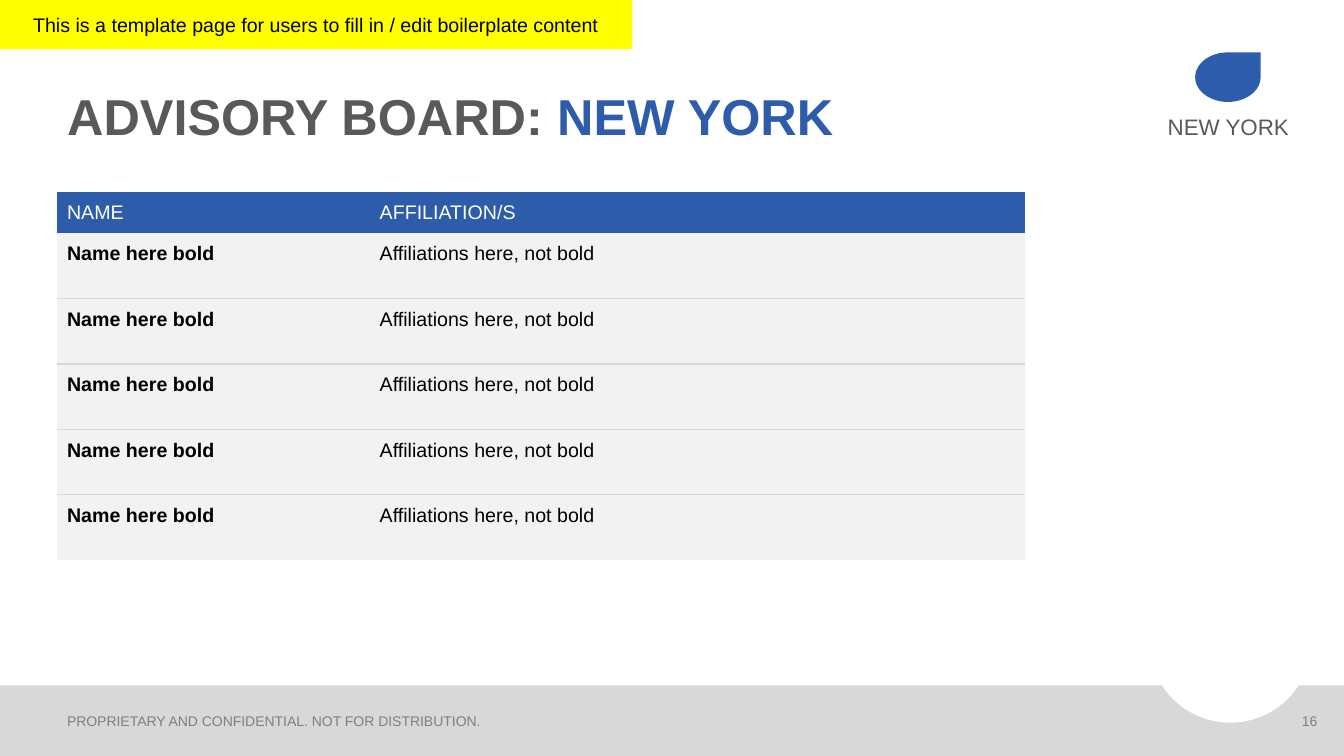
import pptx
import pptx.dml.color
import pptx.enum.shapes
import pptx.enum.text
import pptx.oxml
import pptx.oxml.ns
import pptx.util
from pptx.util import Cm

TITLE = [("ADVISORY BOARD: ", "dark"), ("NEW YORK", "blue")]
HEADER = ("NAME", "AFFILIATION/S")
MEMBERS = [("Name here bold", "Affiliations here, not bold")] * 5
BANNER = "This is a template page for users to fill in / edit boilerplate content"
PLACE = "NEW YORK"
FOOTER = "PROPRIETARY AND CONFIDENTIAL. NOT FOR DISTRIBUTION."
PAGE = "16"

COLORS = {"blue": "2D5CAA", "dark": "595959", "gray": "7F7F7F", "band": "D8D8D8",
          "row": "F2F2F2", "yellow": "FFFF00", "white": "FFFFFF", "black": "000000"}
FONT = "Arial"
NO_STYLE = "{2D5ABB26-0587-4C30-8999-92F81FD0307C}"

WIDTH, HEIGHT = Cm(33.87), Cm(19.05)
MARGIN = Cm(1.44)
BAND_H = Cm(1.78)
FOOTER_TOP, FOOTER_H = Cm(17.81), Cm(0.71)
COLUMNS = (Cm(7.88), Cm(16.51))
HEADER_H, ROW_H = Cm(1.03), Cm(1.65)
PAD, SMALL_PAD = Cm(0.25), Cm(0.13)

ALIGN = pptx.enum.text.PP_ALIGN
ANCHOR = pptx.enum.text.MSO_ANCHOR
SHAPE = pptx.enum.shapes.MSO_SHAPE


def rgb(name):
    return pptx.dml.color.RGBColor.from_string(COLORS[name])


def style_run(r, size, color, bold=False):
    r.font.name = FONT
    r.font.size = pptx.util.Pt(size)
    r.font.bold = bold
    r.font.color.rgb = rgb(color)


def write(tf, text, size, color, bold=False, align=ALIGN.LEFT):
    tf.text = text
    p = tf.paragraphs[0]
    p.alignment = align
    style_run(p.runs[0], size, color, bold)


def add_block(s, kind, box, color):
    sp = s.shapes.add_shape(kind, *box)
    sp.shadow.inherit = False
    sp.fill.solid()
    sp.fill.fore_color.rgb = rgb(color)
    sp.line.fill.background()
    return sp


def add_label(s, box, text, size, color, align=ALIGN.LEFT, anchor=ANCHOR.MIDDLE):
    tf = s.shapes.add_textbox(*box).text_frame
    tf.word_wrap = True
    tf.vertical_anchor = anchor
    write(tf, text, size, color, align=align)


def add_border(cell, side):
    """Draw a thin rule on the side "T" or "B" of a table cell."""
    cell._tc.get_or_add_tcPr().append(pptx.oxml.parse_xml(
        f'<a:ln{side} {pptx.oxml.ns.nsdecls("a")} w="12700"><a:solidFill>'
        f'<a:srgbClr val="{COLORS["band"]}"/></a:solidFill></a:ln{side}>'))


def add_title(s):
    sp = s.shapes.title
    sp.left, sp.top, sp.width, sp.height = MARGIN, Cm(0.76), Cm(30.99), Cm(3.05)
    tf = sp.text_frame
    tf.auto_size = pptx.enum.text.MSO_AUTO_SIZE.NONE
    tf.vertical_anchor = ANCHOR.BOTTOM
    p = tf.paragraphs[0]
    p.alignment = ALIGN.LEFT
    p.line_spacing = 0.9
    for text, color in TITLE:
        r = p.add_run()
        r.text = text
        style_run(r, 36, color, bold=True)


def add_board(s):
    rows = [HEADER] + MEMBERS
    frame = s.shapes.add_table(len(rows), len(COLUMNS), MARGIN, Cm(4.84), sum(COLUMNS),
                               HEADER_H + ROW_H * len(MEMBERS))
    table = frame.table
    table.horz_banding = False
    table.first_row = True
    table._tbl.tblPr.find(pptx.oxml.ns.qn("a:tableStyleId")).text = NO_STYLE
    for column, width in zip(table.columns, COLUMNS):
        column.width = width
    for i, row in enumerate(rows):
        head = i == 0
        table.rows[i].height = HEADER_H if head else ROW_H
        for j, text in enumerate(row):
            cell = table.cell(i, j)
            cell.margin_left = cell.margin_right = PAD
            cell.margin_top = cell.margin_bottom = SMALL_PAD if head else PAD
            cell.vertical_anchor = ANCHOR.MIDDLE if head else ANCHOR.TOP
            write(cell.text_frame, text, 14, "white" if head else "black",
                  bold=not head and j == 0)
            if i > 1:
                add_border(cell, "T")
            if 0 < i < len(MEMBERS):
                add_border(cell, "B")
            cell.fill.solid()
            cell.fill.fore_color.rgb = rgb("blue" if head else "row")


def main():
    prs = pptx.Presentation()
    prs.slide_width, prs.slide_height = WIDTH, HEIGHT
    s = prs.slides.add_slide(prs.slide_layouts[5])

    add_block(s, SHAPE.RECTANGLE, (0, HEIGHT - BAND_H, WIDTH, BAND_H), "band")
    add_block(s, SHAPE.OVAL, (Cm(28.96), Cm(14.12), Cm(4.09), Cm(4.09)), "white")
    add_title(s)
    add_label(s, (MARGIN, FOOTER_TOP, Cm(22.86), FOOTER_H), FOOTER, 10, "gray")
    add_label(s, (Cm(32.03), FOOTER_TOP, Cm(1.42), FOOTER_H), PAGE, 10, "gray", ALIGN.RIGHT)

    add_block(s, SHAPE.TEAR, (Cm(30.12), Cm(1.32), Cm(1.65), Cm(1.25)), "blue")
    add_label(s, (Cm(28.63), Cm(2.72), Cm(4.65), Cm(0.81)), PLACE, 16, "dark",
              ALIGN.CENTER, ANCHOR.TOP)
    add_board(s)

    banner = add_block(s, SHAPE.RECTANGLE, (0, 0, Cm(15.93), Cm(1.24)), "yellow")
    banner.text_frame.vertical_anchor = ANCHOR.MIDDLE
    write(banner.text_frame, BANNER, 14, "black", align=ALIGN.CENTER)
    prs.save("out.pptx")


if __name__ == "__main__":
    main()
